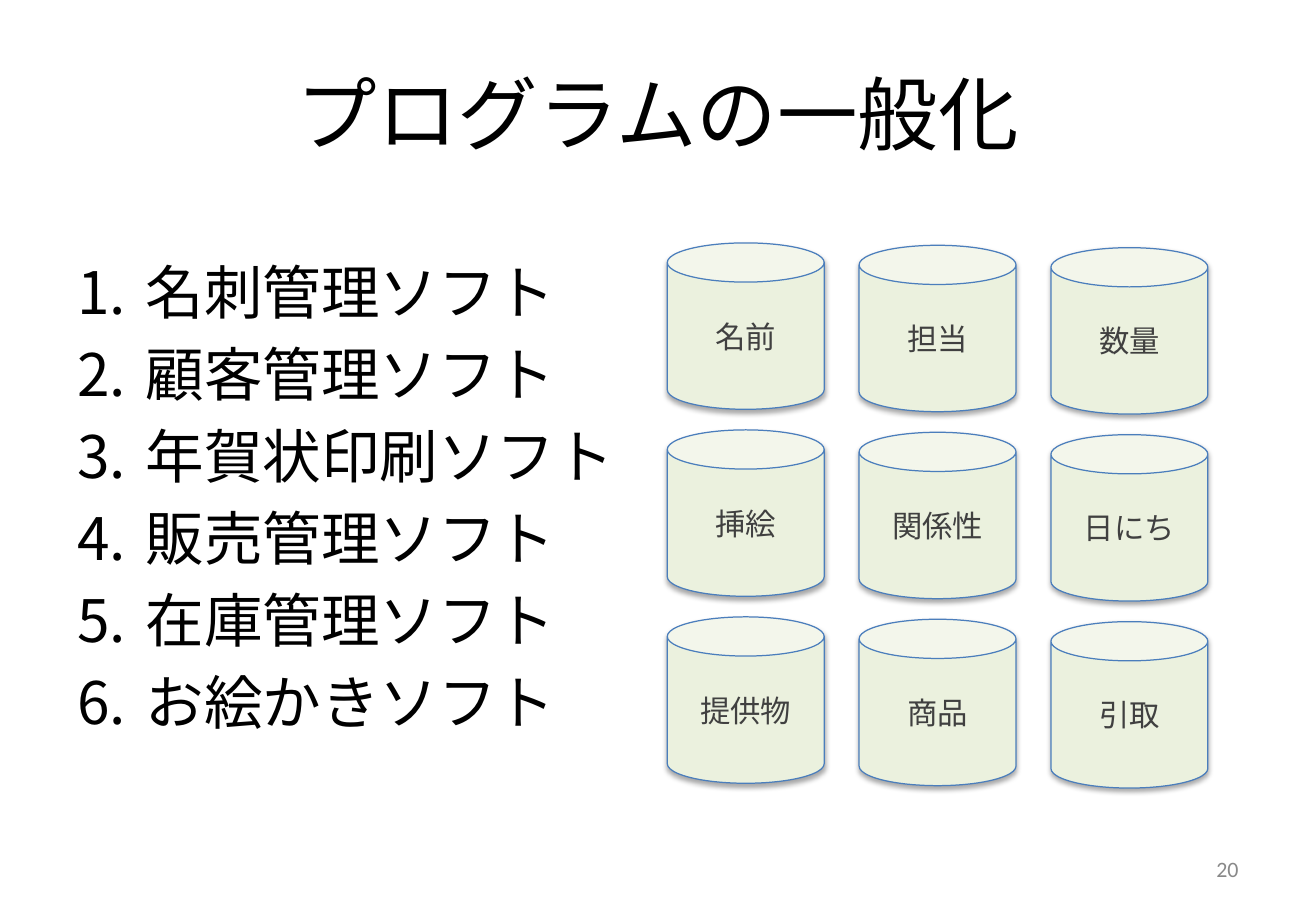
from lxml import etree
from pptx import Presentation
from pptx.dml.color import RGBColor
from pptx.enum import lang, shapes, text
from pptx.oxml import ns
from pptx.util import Cm, Pt

BLACK = RGBColor(0x00, 0x00, 0x00)
GRAY = RGBColor(0x89, 0x89, 0x89)
DARK = RGBColor(0x40, 0x40, 0x40)
GREEN = RGBColor(0xEB, 0xF1, 0xDE)
BLUE = RGBColor(0x4B, 0x7E, 0xBC)

ALIGN = text.PP_ALIGN
ANCHOR = text.MSO_ANCHOR
SOFTS = ["名刺管理ソフト", "顧客管理ソフト", "年賀状印刷ソフト",
         "販売管理ソフト", "在庫管理ソフト", "お絵かきソフト"]
ITEMS = [["名前", "担当", "数量"],
         ["挿絵", "関係性", "日にち"],
         ["提供物", "商品", "引取"]]


def add_run(para, words, size, color, align):
    para.alignment = align
    run = para.add_run()
    run.text = words
    font = run.font
    font.name = "Calibri"
    font.size = Pt(size)
    font.color.rgb = color
    font.language_id = lang.MSO_LANGUAGE_ID.JAPANESE


def add_frame(slide, box, anchor):
    frame = slide.shapes.add_textbox(*map(Cm, box)).text_frame
    frame.word_wrap = True
    frame.vertical_anchor = anchor
    return frame


def add_label(slide, box, words, size, color, align):
    frame = add_frame(slide, box, ANCHOR.MIDDLE)
    add_run(frame.paragraphs[0], words, size, color, align)


def add_list(slide, box, items):
    frame = add_frame(slide, box, ANCHOR.TOP)
    for i, item in enumerate(items):
        para = frame.add_paragraph() if i else frame.paragraphs[0]
        props = para._p.get_or_add_pPr()
        props.set("marL", str(Cm(1.43)))
        props.set("indent", str(-Cm(1.43)))
        etree.SubElement(props, ns.qn("a:buAutoNum"), type="arabicPeriod")
        para.space_before = Pt(7 if i else 0)
        add_run(para, item, 34.7, BLACK, ALIGN.LEFT)


def add_shade(shape):
    """Give the shape a soft shadow straight below it."""
    shape.shadow.inherit = False
    effects = shape._element.spPr.find(ns.qn("a:effectLst"))
    shade = etree.SubElement(
        effects, ns.qn("a:outerShdw"), blurRad=str(Pt(3.1)),
        dist=str(Pt(1.8)), dir="5400000", rotWithShape="0")
    color = etree.SubElement(shade, ns.qn("a:srgbClr"), val="000000")
    etree.SubElement(color, ns.qn("a:alpha"), val="35000")


def add_can(slide, box, words):
    can = slide.shapes.add_shape(shapes.MSO_SHAPE.CAN, *map(Cm, box))
    can.fill.solid()
    can.fill.fore_color.rgb = GREEN
    can.line.color.rgb = BLUE
    can.line.width = Pt(0.75)
    add_shade(can)
    frame = can.text_frame
    frame.vertical_anchor = ANCHOR.MIDDLE
    add_run(frame.paragraphs[0], words, 18, DARK, ALIGN.CENTER)


def add_cans(slide, box, rows):
    """Fill the box with a grid of cans; each column sits a bit lower."""
    left, top, width, height = box
    wide, high, drop = 3.28, 3.48, 0.05
    last = len(rows[0]) - 1
    step_x = (width - wide) / last
    step_y = (height - high - drop * last) / (len(rows) - 1)
    for r, row in enumerate(rows):
        for c, words in enumerate(row):
            spot = (left + c * step_x, top + r * step_y + c * drop)
            add_can(slide, (*spot, wide, high), words)


def main():
    deck = Presentation()
    deck.slide_width, deck.slide_height = Cm(27.51), Cm(19.05)
    slide = deck.slides.add_slide(deck.slide_layouts[6])
    add_label(slide, (1.37, 0.76, 24.77, 3.18), "プログラムの一般化",
              47.7, BLACK, ALIGN.CENTER)
    add_list(slide, (1.37, 5.23, 12.01, 12.57), SOFTS)
    add_label(slide, (19.71, 17.65, 6.43, 1.02), "20", 13, GRAY, ALIGN.RIGHT)
    add_cans(slide, (13.95, 5.08, 11.3, 11.4), ITEMS)
    deck.save("out.pptx")


if __name__ == "__main__":
    main()
